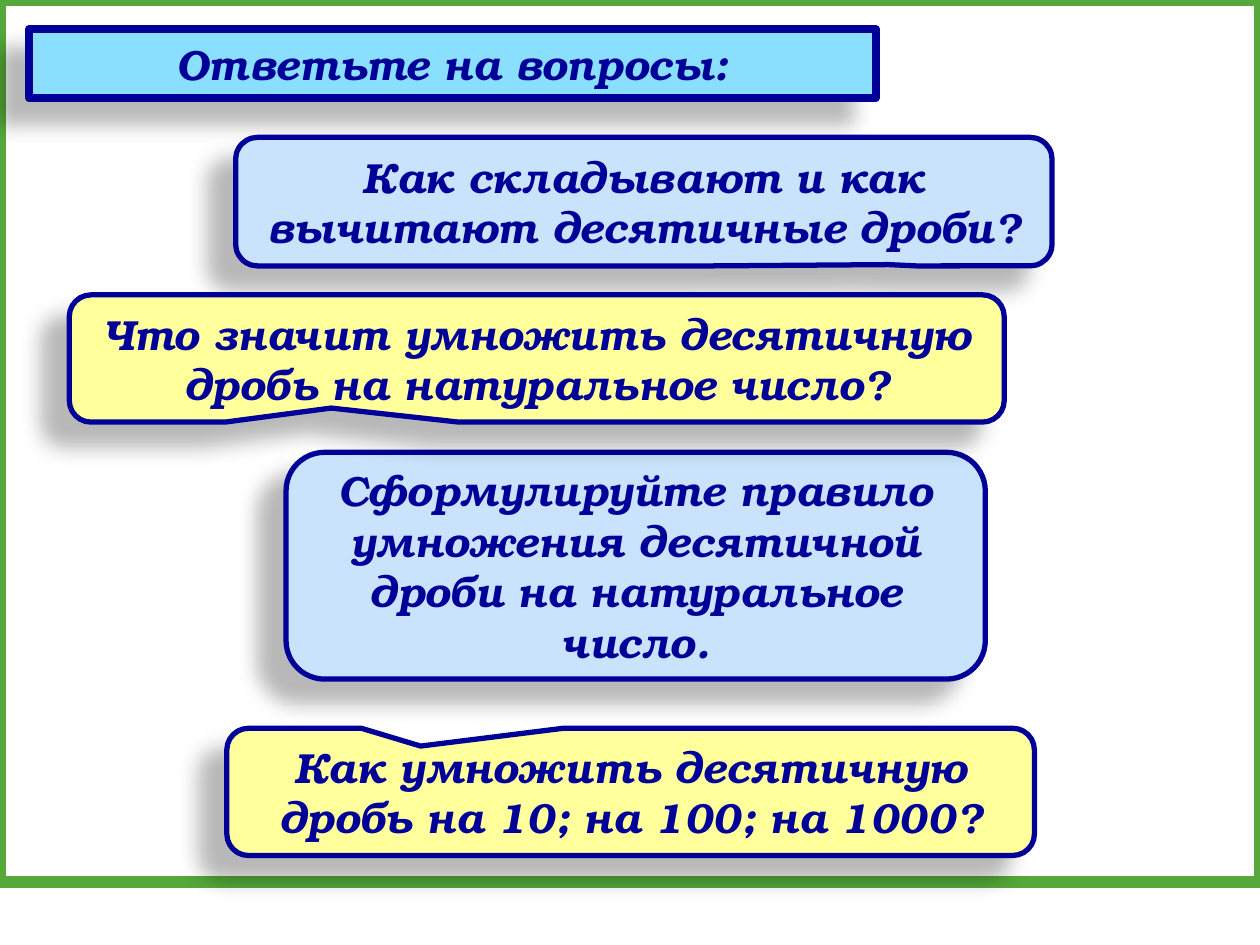
import dataclasses

import pptx
import pptx.dml.color
import pptx.enum.shapes
import pptx.enum.text
import pptx.oxml
import pptx.oxml.ns
import pptx.util
from pptx.util import Inches


@dataclasses.dataclass(frozen=True)
class Theme:
    """Colours, font and sizes of the slide."""
    font: str = "TeX Gyre Bonum"
    size: int = 24
    ink: str = "000099"
    green: str = "55A839"
    cyan: str = "8ADFFF"
    blue: str = "C8E3FB"
    yellow: str = "FFFF9B"
    shade: str = "000000"
    thin: float = 3
    thick: float = 4.5
    edge: float = 7


THEME = Theme()
CALLOUT = pptx.enum.shapes.MSO_SHAPE.ROUNDED_RECTANGULAR_CALLOUT
CARDS = [
    ("Сформулируйте правило умножения десятичной дроби на натуральное число.",
     (2.27, 3.59, 5.55, 1.8), (0.5, -0.14), THEME.blue, 0.1),
    ("Как умножить десятичную дробь на 10; на 100; на 1000?",
     (1.8, 5.78, 6.41, 1.01), (-0.26, -0.36), THEME.yellow, 0),
    ("Как складывают и как вычитают десятичные дроби?",
     (1.87, 1.09, 6.48, 1.02), (0.3, 0.49), THEME.blue, 0.1),
    ("Что значит умножить десятичную дробь на натуральное число?",
     (0.55, 2.34, 7.42, 1.01), (-0.22, 0.39), THEME.yellow, 0),
]


def rgb(code):
    """Return the colour for a hex code."""
    return pptx.dml.color.RGBColor.from_string(code)


def add_shade(shape):
    """Give a shape a soft shadow to its lower left."""
    shape.shadow.inherit = False
    space = pptx.oxml.ns.nsdecls("a")
    shade = pptx.oxml.parse_xml(
        f'<a:outerShdw {space} blurRad="{pptx.util.Pt(11.8)}" '
        f'dist="{pptx.util.Pt(19.7)}" dir="{141 * 60000}" algn="tr" '
        f'rotWithShape="0"><a:srgbClr val="{THEME.shade}">'
        '<a:alpha val="28000"/></a:srgbClr></a:outerShdw>')
    shape._element.spPr.find(pptx.oxml.ns.qn("a:effectLst")).append(shade)


def style_card(shape, text, tip, fill, inset, width):
    """Paint a callout, aim its tip and write its text."""
    for index, value in enumerate((*tip, 0.17)):
        shape.adjustments[index] = value
    shape.fill.solid()
    shape.fill.fore_color.rgb = rgb(fill)
    shape.line.color.rgb = rgb(THEME.ink)
    shape.line.width = pptx.util.Pt(width)
    add_shade(shape)
    frame = shape.text_frame
    frame.word_wrap = True
    frame.auto_size = pptx.enum.text.MSO_AUTO_SIZE.NONE
    frame.vertical_anchor = pptx.enum.text.MSO_ANCHOR.MIDDLE
    frame.margin_left = frame.margin_right = Inches(inset)
    frame.margin_top = frame.margin_bottom = Inches(0.05)
    para = frame.paragraphs[0]
    para.alignment = pptx.enum.text.PP_ALIGN.CENTER
    run = para.add_run()
    run.text = text
    font = run.font
    font.name, font.size = THEME.font, pptx.util.Pt(THEME.size)
    font.bold = font.italic = True
    font.color.rgb = rgb(THEME.ink)


def add_border(slide, box):
    """Draw the green outline with cut corners."""
    left, top, width, height = box
    right, base, cut = left + width, top + height, 0.25
    points = [
        (left, top + cut), (left, base - cut), (left + cut, base),
        (right - 0.17, base), (right, base - 0.34), (right, top + cut),
        (right - cut, top), (left + cut, top),
    ]
    pen = slide.shapes.build_freeform(*points[0], scale=Inches(1))
    pen.add_line_segments(points[1:], close=True)
    border = pen.convert_to_shape()
    border.fill.background()
    border.line.color.rgb = rgb(THEME.green)
    border.line.width = pptx.util.Pt(THEME.edge)
    border.shadow.inherit = False


def place_title(slide, box):
    """Turn the title placeholder into the heading callout."""
    title = slide.shapes.title
    title.left, title.top, title.width, title.height = map(Inches, box)
    space = pptx.oxml.ns.nsdecls("a")
    title._element.spPr.append(pptx.oxml.parse_xml(
        f'<a:prstGeom {space} prst="wedgeRoundRectCallout"><a:avLst/></a:prstGeom>'))
    slide.shapes._spTree.append(title._element)
    style_card(title, "Ответьте на вопросы:", (-0.23, 0.46), THEME.cyan,
               0.1, THEME.thick)


def add_card(slide, box, text, tip, fill, inset):
    """Add one question callout."""
    card = slide.shapes.add_shape(CALLOUT, *map(Inches, box))
    style_card(card, text, tip, fill, inset, THEME.thin)


def main():
    """Build and save the slide."""
    deck = pptx.Presentation()
    deck.slide_width, deck.slide_height = Inches(10), Inches(7.5)
    slide = deck.slides.add_slide(deck.slide_layouts[5])
    add_border(slide, (0.08, 0.08, 9.84, 7.34))
    place_title(slide, (0.23, 0.23, 6.72, 0.55))
    for text, box, tip, fill, inset in CARDS:
        add_card(slide, box, text, tip, fill, inset)
    deck.save("out.pptx")


if __name__ == "__main__":
    main()
